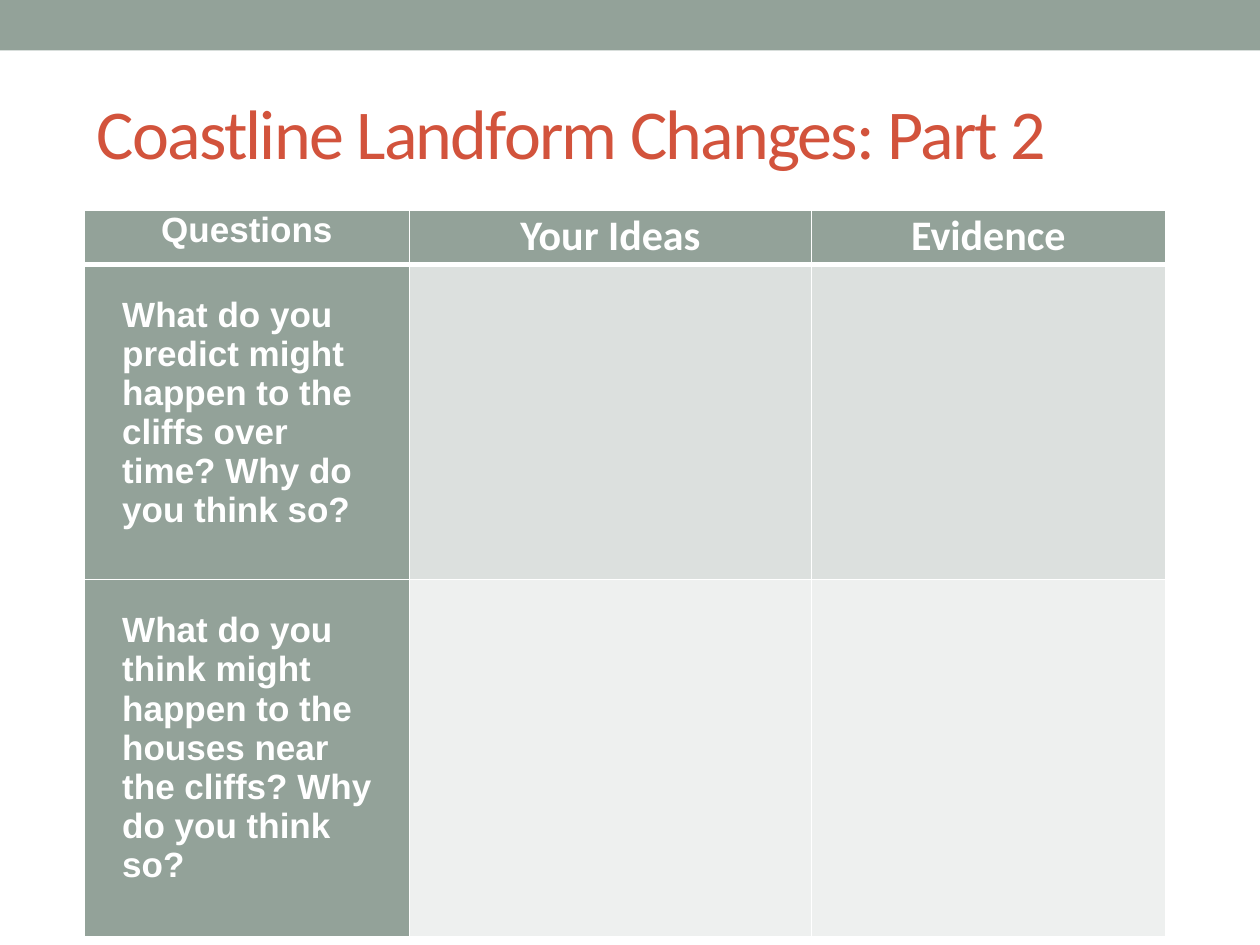
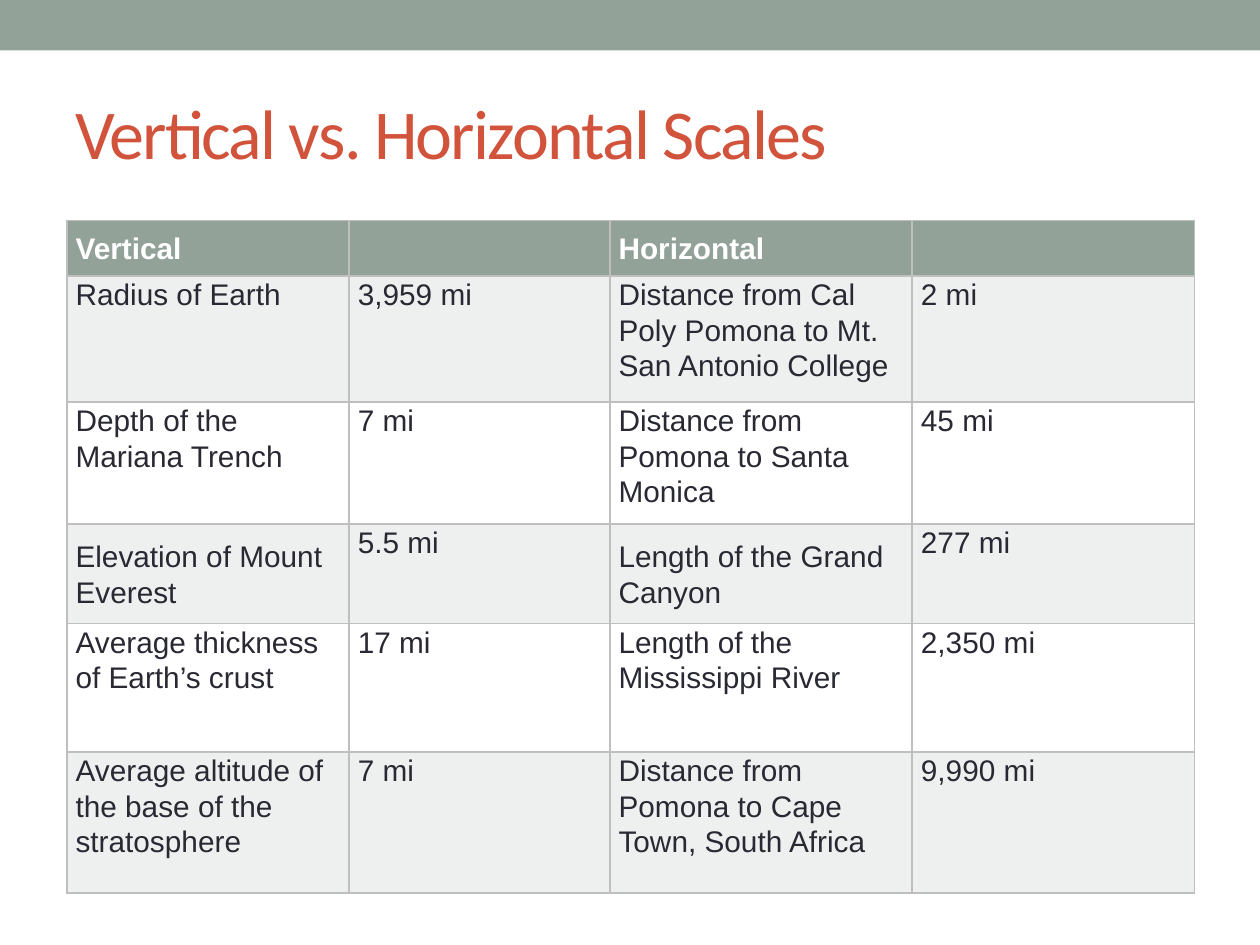
"""Build two slides on coastline landforms and distance scales."""
from dataclasses import dataclass, replace

from lxml import etree
from pptx import Presentation
from pptx.dml.color import RGBColor
from pptx.enum.shapes import MSO_SHAPE
from pptx.enum.text import MSO_ANCHOR, PP_ALIGN
from pptx.oxml.ns import qn
from pptx.presentation import Presentation as Deck
from pptx.slide import Slide
from pptx.table import _Cell
from pptx.util import Emu, Inches, Pt

RECTANGLE = MSO_SHAPE.RECTANGLE
TOP, MIDDLE = MSO_ANCHOR.TOP, MSO_ANCHOR.MIDDLE
LEFT, CENTER = PP_ALIGN.LEFT, PP_ALIGN.CENTER

SAGE = RGBColor(0x93, 0xA2, 0x99)
SAGE_TINT = RGBColor(0xDC, 0xE0, 0xDE)
SAGE_PALE = RGBColor(0xEE, 0xF0, 0xEF)
BRICK = RGBColor(0xD2, 0x53, 0x3C)
INK = RGBColor(0x29, 0x29, 0x34)
SILVER = RGBColor(0xBF, 0xBF, 0xBF)
WHITE = RGBColor(0xFF, 0xFF, 0xFF)

SLIDE_WIDTH, SLIDE_HEIGHT = Inches(10), Inches(7.5)
GRID_COLUMNS = 100
GRID_UNIT = SLIDE_WIDTH // GRID_COLUMNS
BAND_ROWS = 4
TITLE_SIZE, TITLE_TRACKING = 40, -100


@dataclass(frozen=True)
class Box:
    """Place and size in grid units."""
    left: float
    top: float
    width: float
    height: float


@dataclass(frozen=True)
class CellStyle:
    """Look of a table cell, with insets and indent in grid units."""
    fill: RGBColor
    color: RGBColor = WHITE
    size: int = 20
    font: str = "Arial"
    bold: bool = True
    align: PP_ALIGN = LEFT
    anchor: MSO_ANCHOR = TOP
    side_inset: float = 0.7
    end_inset: float = 0
    indent: float = 0
    line_spacing: float = 1.0


@dataclass(frozen=True)
class TableDesign:
    """Grid position, cells and borders of a table."""
    left: float
    top: float
    columns: tuple[float, ...]
    rows: tuple[float, ...]
    cells: list[list[tuple[str, CellStyle]]]
    border: RGBColor
    header_rule: int = 1


def grid(units: float) -> Emu:
    """Convert grid units to a length."""
    return Emu(round(units * GRID_UNIT))


def place(box: Box) -> tuple[Emu, Emu, Emu, Emu]:
    """Convert a box to slide lengths."""
    return grid(box.left), grid(box.top), grid(box.width), grid(box.height)


def add_titled_slide(presentation: Deck, title: str, box: Box) -> Slide:
    """Add a slide with the top band and a title."""
    slide = presentation.slides.add_slide(presentation.slide_layouts[6])
    band = slide.shapes.add_shape(RECTANGLE, *place(Box(0, 0, GRID_COLUMNS, BAND_ROWS)))
    band.shadow.inherit = False
    band.fill.solid()
    band.fill.fore_color.rgb = SAGE
    band.line.fill.background()

    text_frame = slide.shapes.add_textbox(*place(box)).text_frame
    text_frame.word_wrap = True
    text_frame.vertical_anchor = MIDDLE
    text_frame.text = title
    run = text_frame.paragraphs[0].runs[0]
    run.font.name, run.font.size = "Calibri", Pt(TITLE_SIZE)
    run.font.color.rgb = BRICK
    run.font._element.set("spc", str(TITLE_TRACKING))
    return slide


def set_border(cell: _Cell, side: str, color: RGBColor, points: int) -> None:
    """Draw one border of a cell."""
    properties = cell._tc.get_or_add_tcPr()
    line = etree.SubElement(properties, qn(f"a:ln{side}"), w=str(Pt(points)))
    fill = etree.SubElement(line, qn("a:solidFill"))
    etree.SubElement(fill, qn("a:srgbClr"), val=str(color))


def style_cell(cell: _Cell, text: str, style: CellStyle) -> None:
    """Fill a cell and format its text."""
    cell.fill.solid()
    cell.fill.fore_color.rgb = style.fill
    cell.vertical_anchor = style.anchor
    cell.margin_left = cell.margin_right = grid(style.side_inset)
    cell.margin_top = cell.margin_bottom = grid(style.end_inset)
    cell.text_frame.text = text
    paragraph = cell.text_frame.paragraphs[0]
    paragraph.alignment = style.align
    paragraph.line_spacing = style.line_spacing
    if style.indent:
        paragraph._p.get_or_add_pPr().set("marL", str(grid(style.indent)))
    for run in paragraph.runs:
        run.font.name, run.font.size = style.font, Pt(style.size)
        run.font.bold = style.bold
        run.font.color.rgb = style.color


def add_table(slide: Slide, design: TableDesign) -> None:
    """Add a table with its borders and cells."""
    box = Box(design.left, design.top, sum(design.columns), sum(design.rows))
    table = slide.shapes.add_table(
        len(design.rows), len(design.columns), *place(box)).table
    table.first_row = table.horz_banding = False
    for column, width in zip(table.columns, design.columns):
        column.width = grid(width)
    for row, height in zip(table.rows, design.rows):
        row.height = grid(height)
    for row_index, row_cells in enumerate(design.cells):
        rules = {"L": 1, "R": 1,
                 "T": design.header_rule if row_index == 1 else 1,
                 "B": design.header_rule if row_index == 0 else 1}
        for column_index, (text, style) in enumerate(row_cells):
            cell = table.cell(row_index, column_index)
            for side, points in rules.items():
                set_border(cell, side, design.border, points)
            style_cell(cell, text, style)


def coastline_table() -> TableDesign:
    """Describe the question table with its blank answer cells."""
    header = CellStyle(SAGE, align=CENTER)
    wide_header = replace(header, font="Calibri", size=24)
    question = CellStyle(SAGE, side_inset=1.5, end_inset=2.5, indent=1.5)
    questions = (
        ("What do you predict might happen to the cliffs over time? "
         "Why do you think so?", SAGE_TINT),
        ("What do you think might happen to the houses near the cliffs? "
         "Why do you think so?", SAGE_PALE),
    )
    cells = [[("Questions", header), ("Your Ideas", wide_header),
              ("Evidence", wide_header)]]
    for text, tint in questions:
        answer = CellStyle(tint)
        cells.append([(text, question), ("", answer), ("", answer)])
    return TableDesign(6.7, 16.7, (25.8, 31.9, 28.1), (4.3, 23.5, 26.6),
                       cells, WHITE, header_rule=3)


def scales_table() -> TableDesign:
    """Describe the table of vertical and horizontal distances."""
    header = CellStyle(SAGE, size=17, anchor=MIDDLE, line_spacing=1.07)
    distances = (
        ("Radius of Earth", "3,959 mi",
         "Distance from Cal Poly Pomona to Mt. San Antonio College", "2 mi"),
        ("Depth of the Mariana Trench", "7 mi",
         "Distance from Pomona to Santa Monica", "45 mi"),
        ("Elevation of Mount Everest", "5.5 mi",
         "Length of the Grand Canyon", "277 mi"),
        ("Average thickness of Earth’s crust", "17 mi",
         "Length of the Mississippi River", "2,350 mi"),
        ("Average altitude of the base of the stratosphere", "7 mi",
         "Distance from Pomona to Cape Town, South Africa", "9,990 mi"),
    )
    centered_row = 2
    cells = [[(text, header) for text in ("Vertical", "", "Horizontal", "")]]
    for index, (height, height_value, length, length_value) in enumerate(distances):
        value = replace(header, fill=WHITE if index % 2 else SAGE_PALE,
                        color=INK, bold=False, anchor=TOP)
        label = replace(value, anchor=MIDDLE if index == centered_row else TOP)
        cells.append([(height, label), (height_value, value),
                      (length, label), (length_value, value)])
    return TableDesign(5.3, 17.5, (22.4, 20.7, 24, 22.4),
                       (4.4, 10, 9.7, 7.9, 10.2, 11.2), cells, SILVER)


def main() -> None:
    """Build and save the presentation."""
    presentation = Presentation()
    presentation.slide_width, presentation.slide_height = SLIDE_WIDTH, SLIDE_HEIGHT
    coastline = add_titled_slide(
        presentation, "Coastline Landform Changes: Part 2", Box(6.7, 6.7, 85.8, 7.5))
    add_table(coastline, coastline_table())
    scales = add_titled_slide(
        presentation, "Vertical vs. Horizontal Scales", Box(5, 5, 90, 10.8))
    add_table(scales, scales_table())
    presentation.save("out.pptx")


if __name__ == "__main__":
    main()
